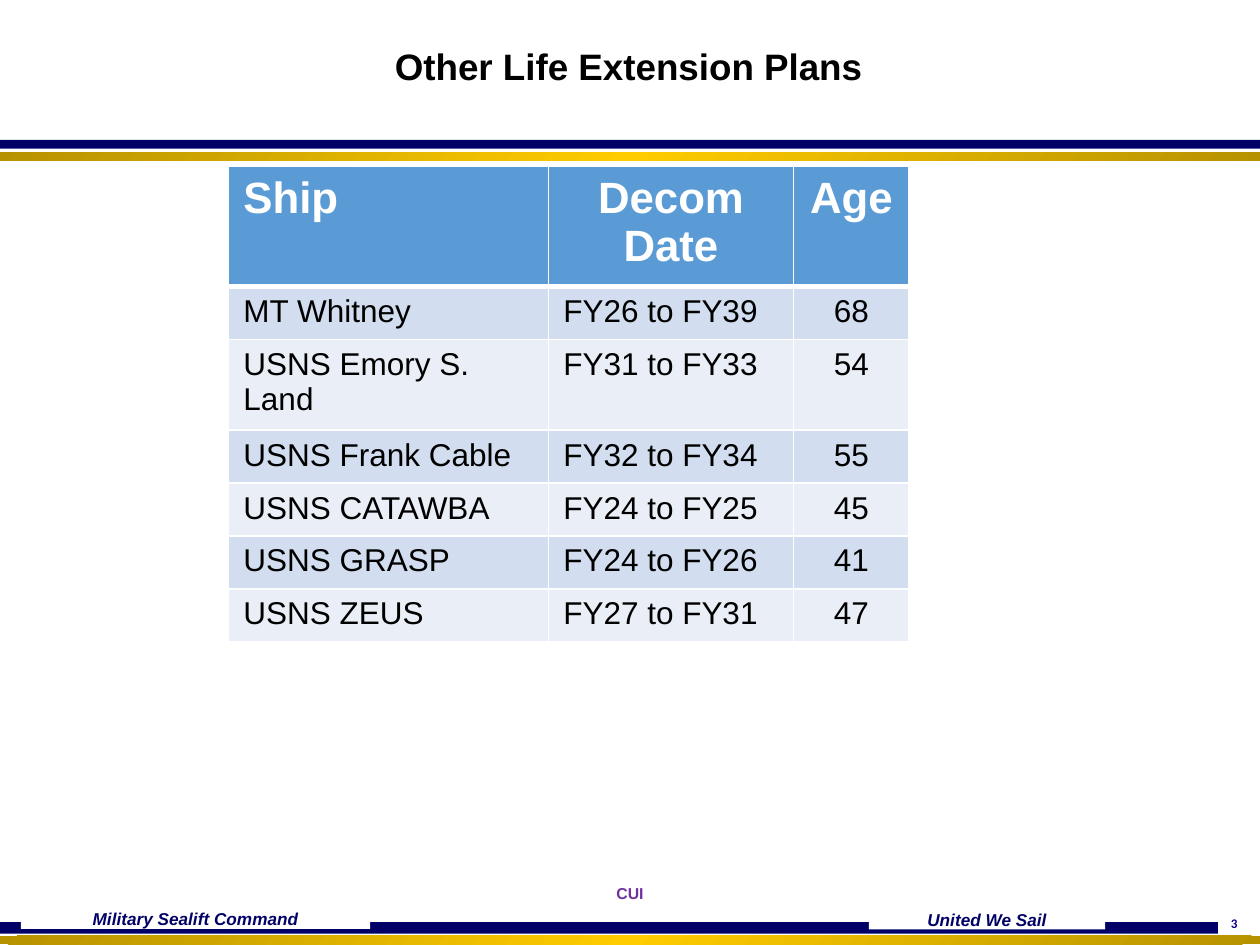
from lxml.etree import SubElement
from pptx import Presentation
from pptx.dml.color import RGBColor
from pptx.enum.shapes import MSO_SHAPE
from pptx.enum.text import MSO_ANCHOR, PP_ALIGN
from pptx.oxml import parse_xml
from pptx.oxml.ns import nsdecls, qn
from pptx.util import Pt

WHITE = RGBColor(0xFF, 0xFF, 0xFF)
BLACK = RGBColor(0x00, 0x00, 0x00)
NAVY = RGBColor(0x00, 0x00, 0x66)
NUMBER_BLUE = RGBColor(0x11, 0x01, 0x89)
PURPLE = RGBColor(0x70, 0x30, 0xA0)
GOLD = RGBColor(0xFF, 0xCC, 0x00)
DARK_GOLD = RGBColor(0xB6, 0x92, 0x00)
HEADER_BLUE = RGBColor(0x5B, 0x9B, 0xD5)
BAND_DARK = RGBColor(0xD2, 0xDE, 0xEF)
BAND_LIGHT = RGBColor(0xEA, 0xEF, 0xF7)

SHIPS = [
    ("Ship", "Decom Date", "Age"),
    ("MT Whitney", "FY26 to FY39", "68"),
    ("USNS Emory S. Land", "FY31 to FY33", "54"),
    ("USNS Frank Cable", "FY32 to FY34", "55"),
    ("USNS CATAWBA", "FY24 to FY25", "45"),
    ("USNS GRASP", "FY24 to FY26", "41"),
    ("USNS ZEUS", "FY27 to FY31", "47"),
]


class Deck:
    """Draws styled elements on the current slide, with lengths in points."""

    font = "Arial"

    def __init__(self, width, height):
        self.prs = Presentation()
        self.prs.slide_width, self.prs.slide_height = Pt(width), Pt(height)
        self.s = self.prs.slides.add_slide(self.prs.slide_layouts[6])

    def style(self, p, size, color, bold=True, italic=False, font=None, align=PP_ALIGN.CENTER):
        p.alignment = align
        p.font.name = font or self.font
        p.font.size, p.font.bold, p.font.italic = Pt(size), bold, italic
        p.font.color.rgb = color

    def bar(self, x, y, w, h, color):
        sp = self.s.shapes.add_shape(MSO_SHAPE.RECTANGLE, Pt(x), Pt(y), Pt(w), Pt(h))
        sp.shadow.inherit = False
        sp.fill.solid()
        sp.fill.fore_color.rgb = color
        sp.line.fill.background()
        return sp

    def gold_bar(self, x, y, w, h):
        sp = self.bar(x, y, w, h, GOLD)
        stops = "".join(
            f'<a:gs pos="{pos}"><a:srgbClr val="{color}"/></a:gs>'
            for pos, color in ((0, DARK_GOLD), (50000, GOLD), (100000, DARK_GOLD))
        )
        gradient = parse_xml(
            f'<a:gradFill {nsdecls("a")} rotWithShape="1"><a:gsLst>{stops}</a:gsLst>'
            '<a:lin ang="2700000" scaled="1"/></a:gradFill>'
        )
        props = sp.element.spPr
        props.replace(props.find(qn("a:solidFill")), gradient)

    def label(self, x, y, w, h, text):
        tf = self.bar(x, y, w, h, WHITE).text_frame
        tf.word_wrap = True
        tf.vertical_anchor = MSO_ANCHOR.MIDDLE
        tf.margin_top = tf.margin_bottom = 0
        p = tf.paragraphs[0]
        p.text = text
        self.style(p, 9.8, NAVY, italic=True)

    def text(self, x, y, w, h, text, size, color, font=None,
             spacing=0.9, anchor=MSO_ANCHOR.TOP, wrap=True):
        tf = self.s.shapes.add_textbox(Pt(x), Pt(y), Pt(w), Pt(h)).text_frame
        tf.word_wrap = wrap
        tf.vertical_anchor = anchor
        p = tf.paragraphs[0]
        p.text = text
        p.line_spacing = spacing
        self.style(p, size, color, font=font)

    def border(self, cell, side, width):
        props = cell._tc.get_or_add_tcPr()
        ln = SubElement(props, qn(f"a:ln{side}"), w=str(Pt(width)))
        SubElement(SubElement(ln, qn("a:solidFill")), qn("a:srgbClr"), val=str(WHITE))

    def cell(self, cell, text, fill, size, color, bold, align, top, bottom):
        for side, width in (("L", 1), ("R", 1), ("T", top), ("B", bottom)):
            self.border(cell, side, width)
        cell.fill.solid()
        cell.fill.fore_color.rgb = fill
        cell.margin_left = cell.margin_right = Pt(8.64)
        cell.margin_top = cell.margin_bottom = Pt(4.32)
        p = cell.text_frame.paragraphs[0]
        p.text = text
        self.style(p, size, color, bold, align=align)

    def table(self, x, y, widths, header_height, row_height, rows):
        heights = [header_height] + [row_height] * (len(rows) - 1)
        table = self.s.shapes.add_table(
            len(rows), len(widths), Pt(x), Pt(y), Pt(sum(widths)), Pt(sum(heights))
        ).table
        for column, width in zip(table.columns, widths):
            column.width = Pt(width)
        for i, (row, height) in enumerate(zip(rows, heights)):
            table.rows[i].height = Pt(height)
            header = i == 0
            band = BAND_DARK if i % 2 else BAND_LIGHT
            for j, text in enumerate(row):
                centred = j == 2 or (header and j == 1)
                self.cell(
                    table.cell(i, j), text,
                    fill=HEADER_BLUE if header else band,
                    size=25 if header else 18,
                    color=WHITE if header else BLACK,
                    bold=header,
                    align=PP_ALIGN.CENTER if centred else PP_ALIGN.LEFT,
                    top=3 if i == 1 else 1,
                    bottom=3 if header else 1,
                )


def main():
    deck = Deck(720, 540)
    deck.bar(0, 80, 720, 5, NAVY)
    deck.gold_bar(0, 87, 720, 5)
    deck.text(693.4, 521.3, 23.8, 14.4, "3", 7.5, NUMBER_BLUE,
              font="Calibri", spacing=0.8, wrap=False)
    deck.bar(0, 527, 696, 6.5, NAVY)
    deck.gold_bar(0, 534.6, 720, 5)
    deck.label(12, 519.4, 199.5, 11.5, "Military Sealift Command")
    deck.label(496.5, 519.4, 135, 11.8, "United We Sail")
    deck.text(0, 502.5, 720, 24, "CUI", 9, PURPLE)
    deck.text(0, 0, 718.5, 77.8, "Other Life Extension Plans", 21, BLACK,
              anchor=MSO_ANCHOR.MIDDLE)
    deck.table(130.5, 95, (182.8, 140.2, 66), 67.4, 29.7, SHIPS)
    deck.prs.save("out.pptx")


if __name__ == "__main__":
    main()
